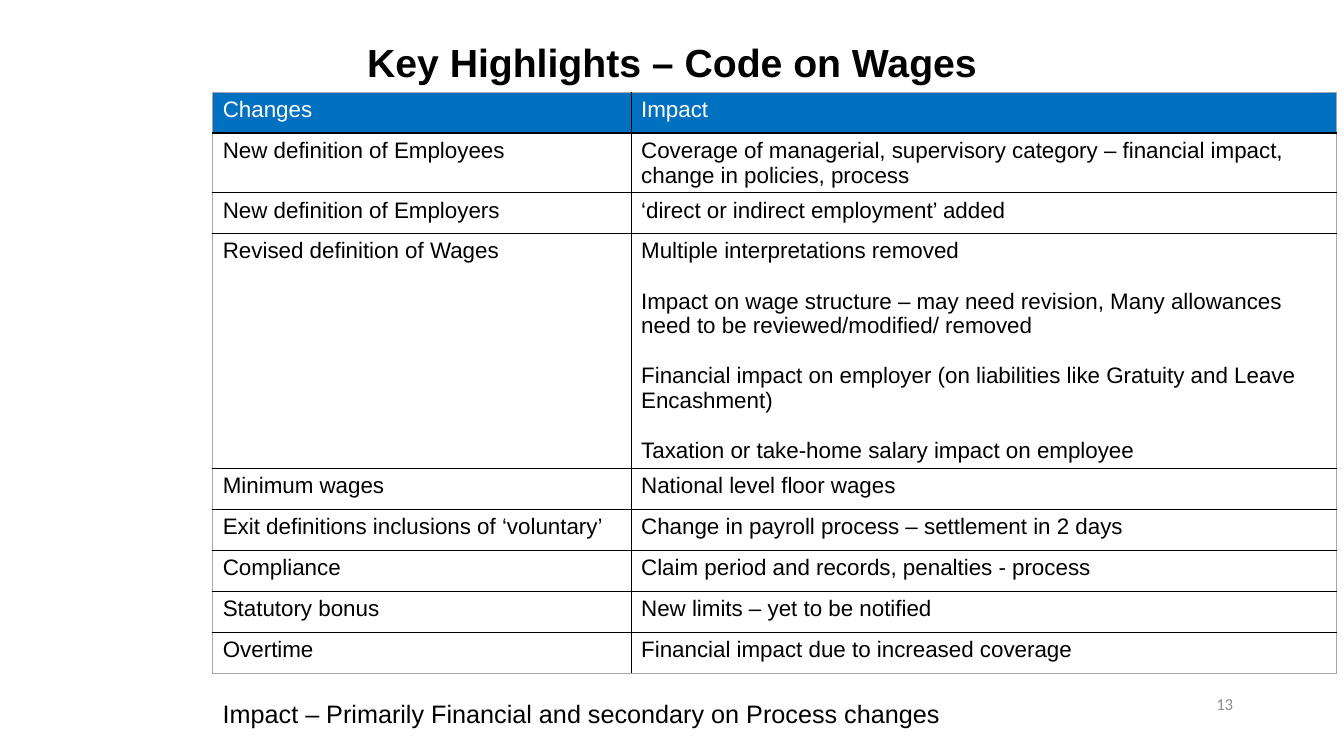
"""Build the slide of key highlights of the Code on Wages."""
import pptx
import pptx.dml.color
import pptx.enum.text
import pptx.util
from lxml import etree

Pt = pptx.util.Pt
ALIGN = pptx.enum.text.PP_ALIGN
COLORS = {"text": "000000", "header": "0070C0", "header_text": "FFFFFF",
          "number": "8C8C8C", "rule": "000000", "frame": "A6A6A6"}
ROWS = [
    ("Changes", "Impact"),
    ("New definition of Employees",
     "Coverage of managerial, supervisory category – financial impact, change in policies, process"),
    ("New definition of Employers", "‘direct or indirect employment’ added"),
    ("Revised definition of Wages",
     "Multiple interpretations removed\n"
     "Impact on wage structure – may need revision, Many allowances need to be reviewed/modified/ removed\n"
     "Financial impact on employer (on liabilities like Gratuity and Leave Encashment)\n"
     "Taxation or take-home salary impact on employee"),
    ("Minimum wages", "National level floor wages"),
    ("Exit definitions inclusions of ‘voluntary’", "Change in payroll process – settlement in 2 days"),
    ("Compliance", "Claim period and records, penalties - process"),
    ("Statutory bonus", "New limits – yet to be notified"),
    ("Overtime", "Financial impact due to increased coverage"),
]
ROW_HEIGHT = 29.2
TALL_ROWS = {1: 42.5, 3: 167.5}
COLUMN_WIDTHS = (298.8, 504)


def write(frame, text, size, color, font="Arial", bold=False, align=ALIGN.LEFT, gap=0):
    frame.text = text
    for index, paragraph in enumerate(frame.paragraphs):
        paragraph.alignment = align
        if index and gap:
            paragraph.space_before = Pt(gap)
        paragraph.font.size = Pt(size)
        paragraph.font.name = font
        paragraph.font.bold = bold
        paragraph.font.color.rgb = pptx.dml.color.RGBColor.from_string(COLORS[color])


def add_border(cell, side, color, width):
    line = etree.SubElement(cell._tc.get_or_add_tcPr(), pptx.oxml.ns.qn(f"a:ln{side}"), w=str(Pt(width)))
    fill = etree.SubElement(line, pptx.oxml.ns.qn("a:solidFill"))
    etree.SubElement(fill, pptx.oxml.ns.qn("a:srgbClr"), val=COLORS[color])


deck = pptx.Presentation()
deck.slide_width, deck.slide_height = Pt(960), Pt(540)
slide = deck.slides.add_slide(deck.slide_layouts[5])

title = slide.shapes.title
title.left, title.top, title.width, title.height = Pt(66), Pt(26), Pt(828), Pt(37)
title.text_frame.vertical_anchor = pptx.enum.text.MSO_ANCHOR.MIDDLE
write(title.text_frame, "Key Highlights – Code on Wages", 28, "text", bold=True, align=ALIGN.CENTER)

heights = [TALL_ROWS.get(index, ROW_HEIGHT) for index in range(len(ROWS))]
highlights = slide.shapes.add_table(len(ROWS), len(COLUMN_WIDTHS), Pt(152), Pt(65.8),
                                    Pt(sum(COLUMN_WIDTHS)), Pt(sum(heights))).table
highlights.horz_banding = False
for column, width in zip(highlights.columns, COLUMN_WIDTHS):
    column.width = Pt(width)
for row_index, (height, texts) in enumerate(zip(heights, ROWS)):
    highlights.rows[row_index].height = Pt(height)
    is_header = row_index == 0
    is_last = row_index == len(ROWS) - 1
    for column_index, text in enumerate(texts):
        cell = highlights.cell(row_index, column_index)
        write(cell.text_frame, text, 16, "header_text" if is_header else "text", gap=18)
        add_border(cell, "L", "rule" if column_index else "frame", 1)
        add_border(cell, "R", "frame" if column_index else "rule", 1)
        add_border(cell, "T", "frame" if is_header else "rule", 2 if row_index == 1 else 1)
        add_border(cell, "B", "frame" if is_last else "rule", 2 if is_header else 1)
        if is_header:
            cell.fill.solid()
            cell.fill.fore_color.rgb = pptx.dml.color.RGBColor.from_string(COLORS["header"])
        else:
            cell.fill.background()

page_number = slide.shapes.add_textbox(Pt(688), Pt(492), Pt(200), Pt(36)).text_frame
page_number.word_wrap = True
write(page_number, "13", 12, "number", font="Calibri", align=ALIGN.RIGHT)

conclusion = slide.shapes.add_textbox(Pt(152), Pt(495.5), Pt(734), Pt(29)).text_frame
conclusion.word_wrap = True
write(conclusion, "Impact – Primarily Financial and secondary on Process changes", 18, "text")

deck.save("out.pptx")
